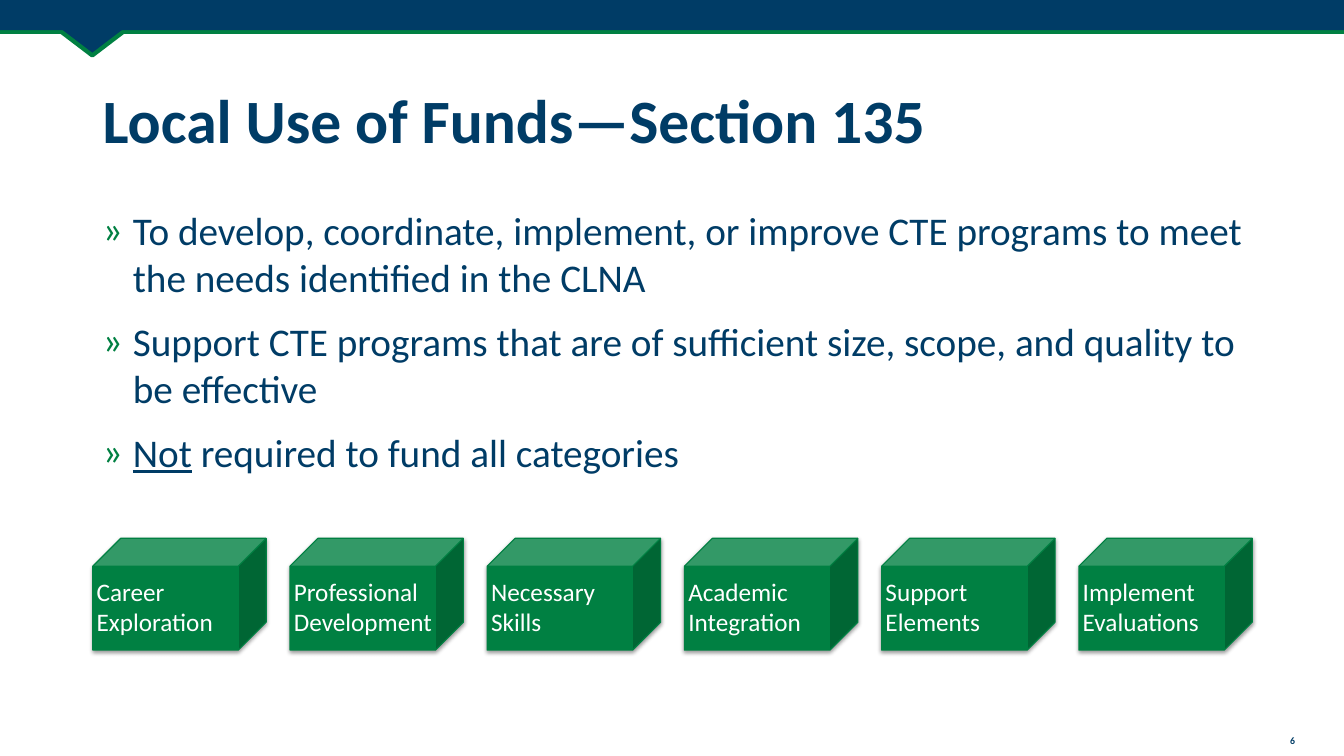
from dataclasses import dataclass

from lxml import etree
from pptx import Presentation
from pptx.dml.color import RGBColor
from pptx.enum import shapes, text
from pptx.oxml import parse_xml
from pptx.oxml.ns import nsdecls, qn
from pptx.util import Inches, Pt

COLORS = {"navy": "003C66", "green": "008042", "white": "FFFFFF", "shadow": "000000"}
FONT = "Calibri"
SLIDE_WIDTH, SLIDE_HEIGHT = 13.33, 7.5
CUBE_LEFT, CUBE_TOP, CUBE_PITCH = 0.92, 5.34, 1.956
CUBE_WIDTH, CUBE_HEIGHT = 1.72, 1.11


@dataclass
class Box:
    left: float
    top: float
    width: float
    height: float

    def lengths(self):
        return [Inches(v) for v in (self.left, self.top, self.width, self.height)]


@dataclass
class Category:
    label: str
    label_width: float = 1.42


CATEGORIES = [
    Category("Career Exploration"),
    Category("Professional Development", 1.65),
    Category("Necessary Skills"),
    Category("Academic Integration"),
    Category("Support Elements"),
    Category("Implement Evaluations"),
]

# Each bullet is an underlined lead and the rest of its text.
BULLETS = [
    ("", "To develop, coordinate, implement, or improve CTE programs to meet "
         "the needs identified in the CLNA"),
    ("", "Support CTE programs that are of sufficient size, scope, and quality "
         "to be effective"),
    ("Not", " required to fund all categories"),
]


def rgb(name: str) -> RGBColor:
    return RGBColor.from_string(COLORS[name])


def add_run(p, content: str, *, size: float, color: str = "navy",
            bold: bool = False, underline: bool = False) -> None:
    r = p.add_run()
    r.text = content
    r.font.name = FONT
    r.font.size = Pt(size)
    r.font.color.rgb = rgb(color)
    r.font.bold = bold
    if underline:
        r.font.underline = True


def add_frame(slide, box: Box, anchor=text.MSO_ANCHOR.TOP):
    tf = slide.shapes.add_textbox(*box.lengths()).text_frame
    tf.word_wrap = True
    tf.vertical_anchor = anchor
    return tf


def add_text(slide, box: Box, content: str, *, align=text.PP_ALIGN.LEFT,
             anchor=text.MSO_ANCHOR.TOP, line_spacing: float = 1.0, **style) -> None:
    p = add_frame(slide, box, anchor).paragraphs[0]
    p.alignment = align
    p.line_spacing = line_spacing
    add_run(p, content, **style)


def add_solid(slide, kind, box: Box, fill: str, line_width: float = 0):
    """Add a preset shape with a plain fill and, if wanted, a green outline."""
    sp = slide.shapes.add_shape(kind, *box.lengths())
    sp.shadow.inherit = False
    sp.fill.solid()
    sp.fill.fore_color.rgb = rgb(fill)
    if line_width:
        sp.line.color.rgb = rgb("green")
        sp.line.width = Pt(line_width)
    else:
        sp.line.fill.background()
    return sp


def add_drop_shadow(sp) -> None:
    effects = sp._element.spPr.find(qn("a:effectLst"))
    effects.append(parse_xml(
        f'<a:outerShdw {nsdecls("a")} blurRad="{Pt(3)}" dist="{Pt(1.4)}" '
        f'dir="5400000" rotWithShape="0"><a:srgbClr val="{COLORS["shadow"]}">'
        '<a:alpha val="40000"/></a:srgbClr></a:outerShdw>'))


def add_bullet_mark(p) -> None:
    pPr = p._p.get_or_add_pPr()
    pPr.set("marL", str(Inches(0.3)))
    pPr.set("indent", str(-Inches(0.3)))
    color = etree.SubElement(pPr, qn("a:buClr"))
    etree.SubElement(color, qn("a:srgbClr"), val=COLORS["green"])
    etree.SubElement(pPr, qn("a:buFont"), typeface=FONT)
    etree.SubElement(pPr, qn("a:buChar"), char="»")


def draw_header(slide) -> None:
    rule = slide.shapes.add_connector(shapes.MSO_CONNECTOR.STRAIGHT, 0, Inches(0.32),
                                      Inches(SLIDE_WIDTH), Inches(0.32))
    rule.line.color.rgb = rgb("green")
    rule.line.width = Pt(3)
    etree.SubElement(rule._element.spPr, qn("a:effectLst"))
    notch = add_solid(slide, shapes.MSO_SHAPE.ISOSCELES_TRIANGLE,
                      Box(0.39, 0.15, 1.05, 0.4), "navy", 3)
    notch.rotation = 180
    add_solid(slide, shapes.MSO_SHAPE.RECTANGLE, Box(0, 0, SLIDE_WIDTH, 0.3), "navy")


def draw_bullets(slide) -> None:
    tf = add_frame(slide, Box(0.92, 2, 11.5, 3.2))
    for i, (lead, rest) in enumerate(BULLETS):
        p = tf.add_paragraph() if i else tf.paragraphs[0]
        add_bullet_mark(p)
        p.space_before = Pt(6 if i else 0)
        p.space_after = Pt(6)
        if lead:
            add_run(p, lead, size=28, underline=True)
        add_run(p, rest, size=28)


def draw_categories(slide) -> None:
    lefts = [CUBE_LEFT + i * CUBE_PITCH for i in range(len(CATEGORIES))]
    for left in lefts:
        cube = add_solid(slide, shapes.MSO_SHAPE.CUBE,
                         Box(left, CUBE_TOP, CUBE_WIDTH, CUBE_HEIGHT), "green", 0.79)
        add_drop_shadow(cube)
    for left, category in zip(lefts, CATEGORIES):
        add_text(slide, Box(left - 0.06, 5.67, category.label_width, 0.71),
                 category.label, size=18, color="white")


def main() -> None:
    prs = Presentation()
    prs.slide_width, prs.slide_height = Inches(SLIDE_WIDTH), Inches(SLIDE_HEIGHT)
    slide = prs.slides.add_slide(prs.slide_layouts[6])
    draw_header(slide)
    add_text(slide, Box(12.57, 7.24, 0.5, 0.22), "6", size=7, bold=True,
             align=text.PP_ALIGN.CENTER)
    add_text(slide, Box(0.92, 0.5, 11.5, 1.45), "Local Use of Funds—Section 135",
             size=44, bold=True, anchor=text.MSO_ANCHOR.MIDDLE, line_spacing=0.9)
    draw_bullets(slide)
    draw_categories(slide)
    prs.save("out.pptx")


if __name__ == "__main__":
    main()
